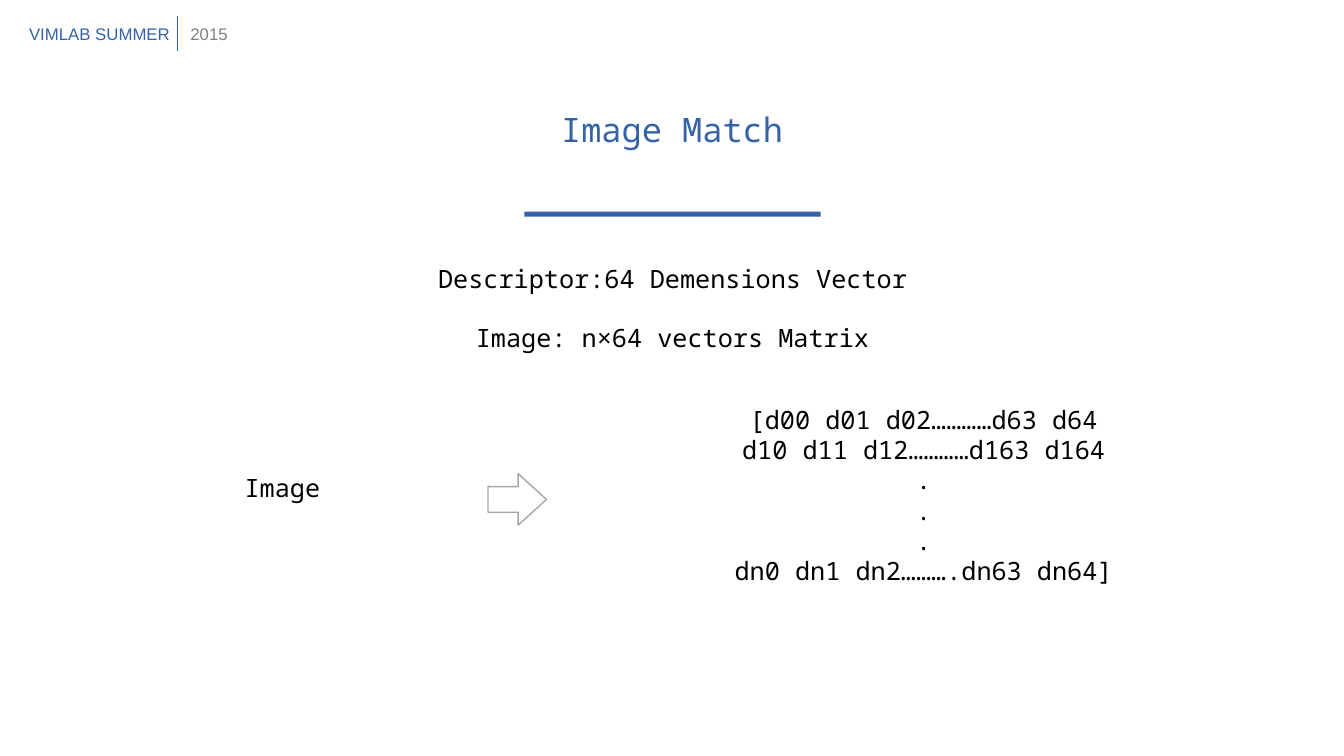
from pptx import Presentation
from pptx import util as u
from pptx.dml.color import RGBColor
from pptx.enum import shapes, text
from pptx.oxml.ns import qn
from lxml import etree

PX = 9144  # 100 px to the inch
BLUE = RGBColor(0x35, 0x63, 0xA8)
GREY = RGBColor(0x80, 0x80, 0x80)
LIGHT_GREY = RGBColor(0xA6, 0xA6, 0xA6)
BLACK = RGBColor(0, 0, 0)
MONO = "Noto Sans Mono"


def px(*lengths):
    return [u.Emu(n * PX) for n in lengths]


def add_text(box, lines, align, inset, **font):
    tf = s.shapes.add_textbox(*px(*box)).text_frame
    tf.word_wrap = True
    margins = dict(zip(("margin_left", "margin_top", "margin_right", "margin_bottom"), px(*inset)))
    for name, value in margins.items():
        setattr(tf, name, value)
    for i, line in enumerate(lines):
        p = tf.paragraphs[0] if i == 0 else tf.add_paragraph()
        p.alignment = align
        r = p.add_run()
        r.text = line
        r.font.color.rgb = font["color"]
        for name in ("name", "size"):
            setattr(r.font, name, font[name])


prs = Presentation()
prs.slide_width, prs.slide_height = px(1333, 750)
s = prs.slides.add_slide(prs.slide_layouts[6])

# Title, statements and matrix
matrix = ["[d00 d01 d02…………d63 d64", "d10 d11 d12…………d163 d164", ".", ".", ".",
          "dn0 dn1 dn2……….dn63 dn64]"]
for box, lines, size, color in [
    ((402, 108, 529, 56), ["Image Match"], 24, BLUE),
    ((244, 261, 846, 43), ["Descriptor:64 Demensions Vector"], 18, BLACK),
    ((244, 320, 846, 43), ["Image: n×64 vectors Matrix"], 18, BLACK),
    ((672, 401, 488, 210), matrix, 18, BLACK),
    ((19, 469, 522, 30), ["Image"], 18, BLACK),
]:
    add_text(box, lines, text.PP_ALIGN.CENTER, (0, 0, 0, 0),
             name=MONO, size=u.Pt(size), color=color)

# Rule under the title
rule = s.shapes.add_shape(shapes.MSO_SHAPE.RECTANGLE, *px(520, 210, 294, 5))
rule.shadow.inherit = False
rule.fill.solid()
rule.fill.fore_color.rgb = BLUE
rule.line.fill.background()

# Arrow from image to matrix
arrow = s.shapes.add_shape(shapes.MSO_SHAPE.RIGHT_ARROW, *px(484, 470, 58, 51))
arrow.shadow.inherit = False
arrow.adjustments[0] = 0.5
arrow.adjustments[1] = 0.55
arrow.fill.background()
arrow.line.color.rgb = LIGHT_GREY
arrow.line.width = u.Pt(1)

# Header with divider
divider = s.shapes.add_connector(shapes.MSO_CONNECTOR.STRAIGHT, *px(176, 16, 176, 51))
divider.line.color.rgb = BLUE
divider.line.width = u.Pt(0.5)
etree.SubElement(divider._element.spPr, qn("a:effectLst"))
for left, width, label, color in [(19, 164, "VIMLAB SUMMER", BLUE), (179, 57, "2015", GREY)]:
    add_text((left, 19, width, 30), [label], text.PP_ALIGN.LEFT, (10, 5, 0, 5),
             name="Arial", size=u.Pt(12), color=color)

prs.save("out.pptx")
